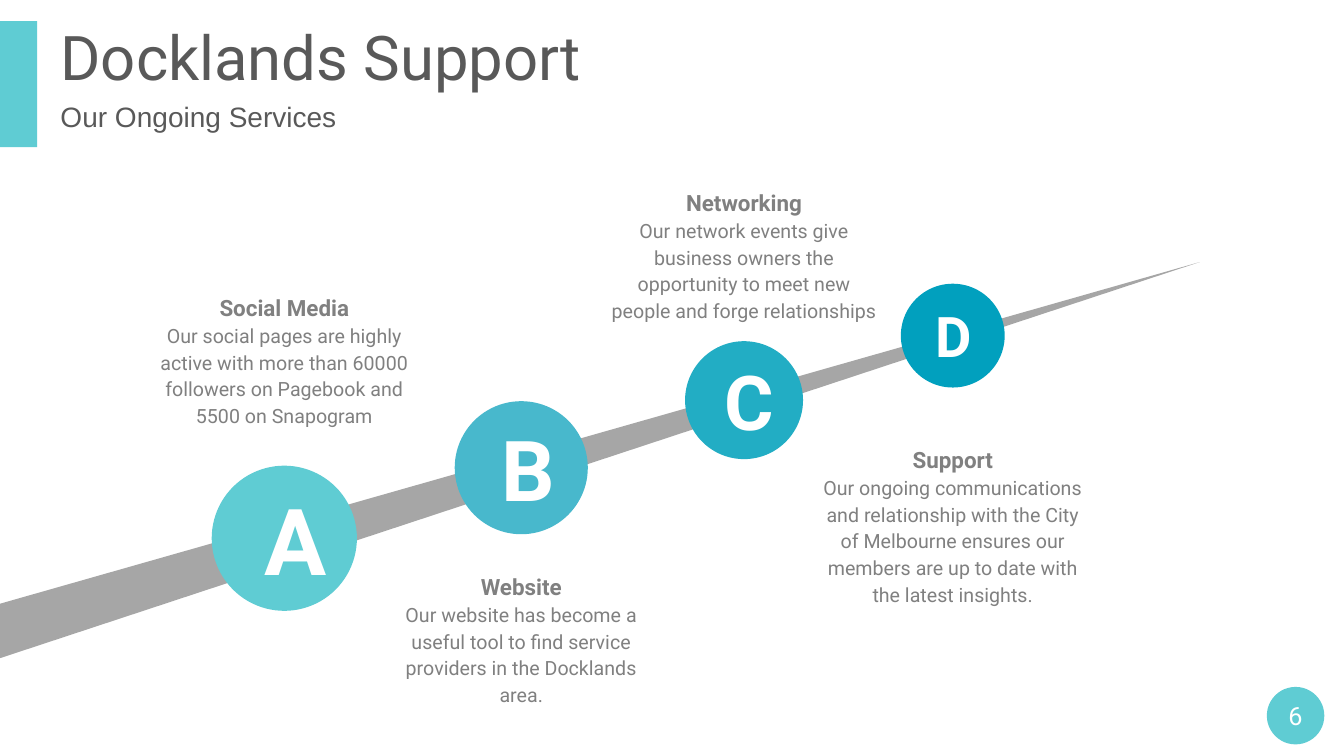
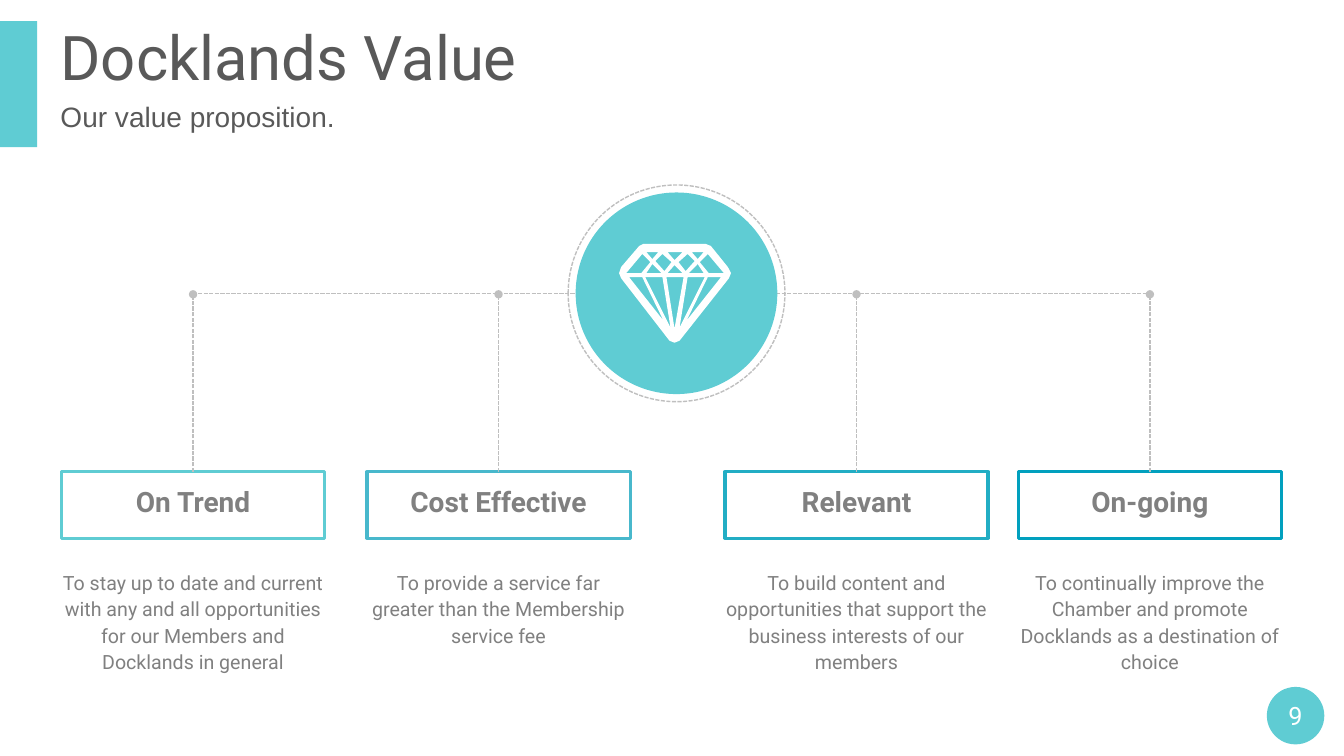
"""Build the Docklands support and value slides."""
from lxml import etree
from pptx import Presentation
from pptx import util as u
from pptx.dml.color import RGBColor
from pptx.enum import dml, shapes, text
from pptx.oxml.ns import qn

COLOURS = {
    "aqua": "5FCCD3", "sky": "48B8CC", "teal": "22ADC4", "ocean": "01A0BE",
    "white": "FFFFFF", "heading": "595959", "copy": "808080",
    "road": "A6A6A6", "rule": "BFBFBF",
}
SEQUENCE = ["aqua", "sky", "teal", "ocean"]
TEXT_WIDTH = 2.84

SUPPORT = {"title": "Docklands Support", "subtitle": "Our Ongoing Services", "number": 6}
ROAD = [(0, 5.99), (11.9, 2.6), (0, 6.53)]
SERVICES = [
    {"letter": "A", "centre": (2.82, 5.34), "size": 1.44, "points": 66, "inset": 0.22, "top": 2.87,
     "name": "Social Media", "height": 1.43,
     "about": "Our social pages are highly active with more than 60000 followers on Pagebook and 5500 on Snapogram"},
    {"letter": "B", "centre": (5.17, 4.64), "size": 1.32, "points": 60, "inset": 0.14, "top": 5.64,
     "name": "Website", "height": 1.43,
     "about": "Our website has become a useful tool to find service providers in the Docklands area."},
    {"letter": "C", "centre": (7.38, 3.97), "size": 1.17, "points": 54, "inset": 0.1, "top": 1.83,
     "name": "Networking", "height": 1.43,
     "about": "Our network events give business owners the opportunity to meet new people and forge relationships"},
    {"letter": "D", "centre": (9.45, 3.33), "size": 1.03, "points": 40, "inset": 0.02, "top": 4.38,
     "name": "Support", "height": 1.7,
     "about": "Our ongoing communications and relationship with the City of Melbourne ensures our members "
              "are up to date with the latest insights."},
]

VALUE = {"title": "Docklands Value", "subtitle": "Our value proposition.", "number": 9}
BENEFITS = [
    (0.61, "On Trend",
     "To stay up to date and current with any and all opportunities for our Members and Docklands in general"),
    (3.64, "Cost Effective", "To provide a service far greater than the Membership service fee"),
    (7.19, "Relevant",
     "To build content and opportunities that support the business interests of our members"),
    (10.1, "On-going",
     "To continually improve the Chamber and promote Docklands as a destination of choice"),
]
BENEFIT_TOP, BENEFIT_WIDTH, BENEFIT_HEIGHT = 4.68, 2.61, 0.66
RAIL = 2.91
HUB = (6.71, RAIL)
GEM_AXIS = 6.695
GEM_OUTLINE = [(7.22, 2.65), (7.05, 2.44), (7, 2.42), (6.38, 2.42), (6.34, 2.44), (6.16, 2.65), (6.14, 2.71),
               (6.16, 2.76), (6.64, 3.38), (6.69, 3.4), (6.74, 3.38), (7.23, 2.76), (7.25, 2.71)]
GEM_MIDDLE_FACETS = [
    [(6.77, 2.5), (6.69, 2.58), (6.62, 2.5)],
    [(6.77, 2.71), (6.62, 2.71), (6.69, 2.63)],
    [(6.61, 2.75), (6.78, 2.75), (6.69, 3.26)],
]
GEM_LEFT_FACETS = [
    [(6.53, 2.5), (6.47, 2.57), (6.41, 2.5)],
    [(6.56, 2.71), (6.41, 2.71), (6.47, 2.62)],
    [(6.66, 2.6), (6.59, 2.69), (6.5, 2.59), (6.57, 2.52)],
    [(6.37, 2.52), (6.45, 2.6), (6.36, 2.71), (6.21, 2.71)],
    [(6.24, 2.75), (6.37, 2.75), (6.58, 3.18)],
    [(6.4, 2.75), (6.57, 2.75), (6.65, 3.25)],
]


def colour(name):
    return RGBColor.from_string(COLOURS[name])


def inches(*lengths):
    return [u.Inches(length) for length in lengths]


def paint(shape, fill=None, line=None, width=1, dashed=False):
    shape.shadow.inherit = False
    if fill:
        shape.fill.solid()
        shape.fill.fore_color.rgb = colour(fill)
    else:
        shape.fill.background()
    if line:
        draw_line(shape.line, line, width, dashed)
    else:
        shape.line.fill.background()
    return shape


def draw_line(line, name, width=1, dashed=True):
    line.color.rgb = colour(name)
    line.width = u.Pt(width)
    if dashed:
        line.dash_style = dml.MSO_LINE.SQUARE_DOT


def style(para, size, name="copy", bold=False, font="Roboto", align=text.PP_ALIGN.CENTER, spacing=None):
    para.alignment = align
    para.font.name, para.font.size, para.font.bold = font, u.Pt(size), bold
    para.font.color.rgb = colour(name)
    if spacing:
        para.line_spacing = spacing


def label(shape, words, size, inset=0, **options):
    frame = shape.text_frame
    frame.margin_left = u.Inches(inset)
    frame.margin_right = frame.margin_top = frame.margin_bottom = 0
    frame.vertical_anchor = text.MSO_ANCHOR.MIDDLE
    frame.text = words
    style(frame.paragraphs[0], size, **options)
    return frame.paragraphs[0]


def add_circle(page, centre, size, **look):
    x, y = centre
    box = inches(x - size / 2, y - size / 2, size, size)
    return paint(page.shapes.add_shape(shapes.MSO_SHAPE.OVAL, *box), **look)


def add_copy(page, centre, top, height, lines):
    box = page.shapes.add_textbox(*inches(centre - TEXT_WIDTH / 2, top, TEXT_WIDTH, height))
    frame = box.text_frame
    frame.word_wrap = True
    frame.text = "\n".join(words for words, size, bold in lines)
    for para, (words, size, bold) in zip(frame.paragraphs, lines):
        style(para, size, bold=bold, spacing=u.Pt(19))


def add_outline(page, contours, fill):
    builder = None
    for contour in contours:
        start, *rest = [inches(*point) for point in contour]
        if builder is None:
            builder = page.shapes.build_freeform(*start)
        else:
            builder.move_to(*start)
        builder.add_line_segments(rest, close=True)
    return paint(builder.convert_to_shape(), fill)


def add_rule(page, start, end, box=None):
    rule = page.shapes.add_connector(shapes.MSO_CONNECTOR.STRAIGHT, *inches(*start, *end))
    draw_line(rule.line, "rule")
    props = rule.element.spPr
    if box is not None:
        rule.begin_connect(box, 0)
        etree.SubElement(props.find(qn("a:ln")), qn("a:tailEnd"), type="oval")
    etree.SubElement(props, qn("a:effectLst"))


def add_page(deck, heading):
    page = deck.slides.add_slide(deck.slide_layouts[1])
    title, subtitle = page.shapes.title, page.placeholders[1]
    for holder, top, height in ((title, 0.3, 0.6), (subtitle, 0.89, 0.52)):
        holder.left, holder.top, holder.width, holder.height = inches(0.6, top, 12.39, height)
        holder.text_frame.auto_size = text.MSO_AUTO_SIZE.NONE
    left = text.PP_ALIGN.LEFT
    para = label(title, heading["title"], 44, name="heading", align=left, spacing=0.9)
    para.space_before = u.Pt(10)
    para = label(subtitle, heading["subtitle"], 20, name="heading", font="Arial", align=left)
    para.space_before = u.Pt(0)
    props = para._p.get_or_add_pPr()
    props.set("marL", "0")
    props.set("indent", "0")
    etree.SubElement(props, qn("a:buNone")).getparent()
    props.append(props.find(qn("a:defRPr")))
    paint(page.shapes.add_shape(shapes.MSO_SHAPE.RECTANGLE, *inches(0, 0.21, 0.37, 1.25)), "aqua")
    badge = add_circle(page, (12.85, 7.1), 0.57, fill="aqua")
    label(badge, str(heading["number"]), 18, name="white")
    return page


def build_support(deck):
    page = add_page(deck, SUPPORT)
    add_outline(page, [ROAD], "road")
    for service, fill in zip(SERVICES, SEQUENCE):
        circle = add_circle(page, service["centre"], service["size"], fill=fill)
        label(circle, service["letter"], service["points"], service["inset"], name="white", bold=True)
        add_copy(page, service["centre"][0], service["top"], service["height"],
                 [(service["name"], 16, True), (service["about"], 14, False)])


def build_value(deck):
    page = add_page(deck, VALUE)
    add_rule(page, (1.91, RAIL), (11.42, RAIL))
    for (left, name, about), line in zip(BENEFITS, SEQUENCE):
        centre = left + BENEFIT_WIDTH / 2
        place = inches(left, BENEFIT_TOP, BENEFIT_WIDTH, BENEFIT_HEIGHT)
        box = paint(page.shapes.add_shape(shapes.MSO_SHAPE.RECTANGLE, *place), line=line, width=2.25)
        label(box, name, 20, bold=True, spacing=u.Pt(19))
        add_rule(page, (centre, BENEFIT_TOP), (centre, RAIL + 0.01), box)
        add_copy(page, centre, 5.58, 1.17, [(about, 14, False)])
    add_circle(page, HUB, 2.15, line="rule", dashed=True)
    add_circle(page, HUB, 2, fill="aqua")
    right_facets = [[(2 * GEM_AXIS - x, y) for x, y in facet] for facet in GEM_LEFT_FACETS]
    add_outline(page, [GEM_OUTLINE] + GEM_MIDDLE_FACETS + GEM_LEFT_FACETS + right_facets, "white")


def main():
    deck = Presentation()
    deck.slide_width, deck.slide_height = inches(13.33, 7.5)
    build_support(deck)
    build_value(deck)
    deck.save("out.pptx")


if __name__ == "__main__":
    main()
